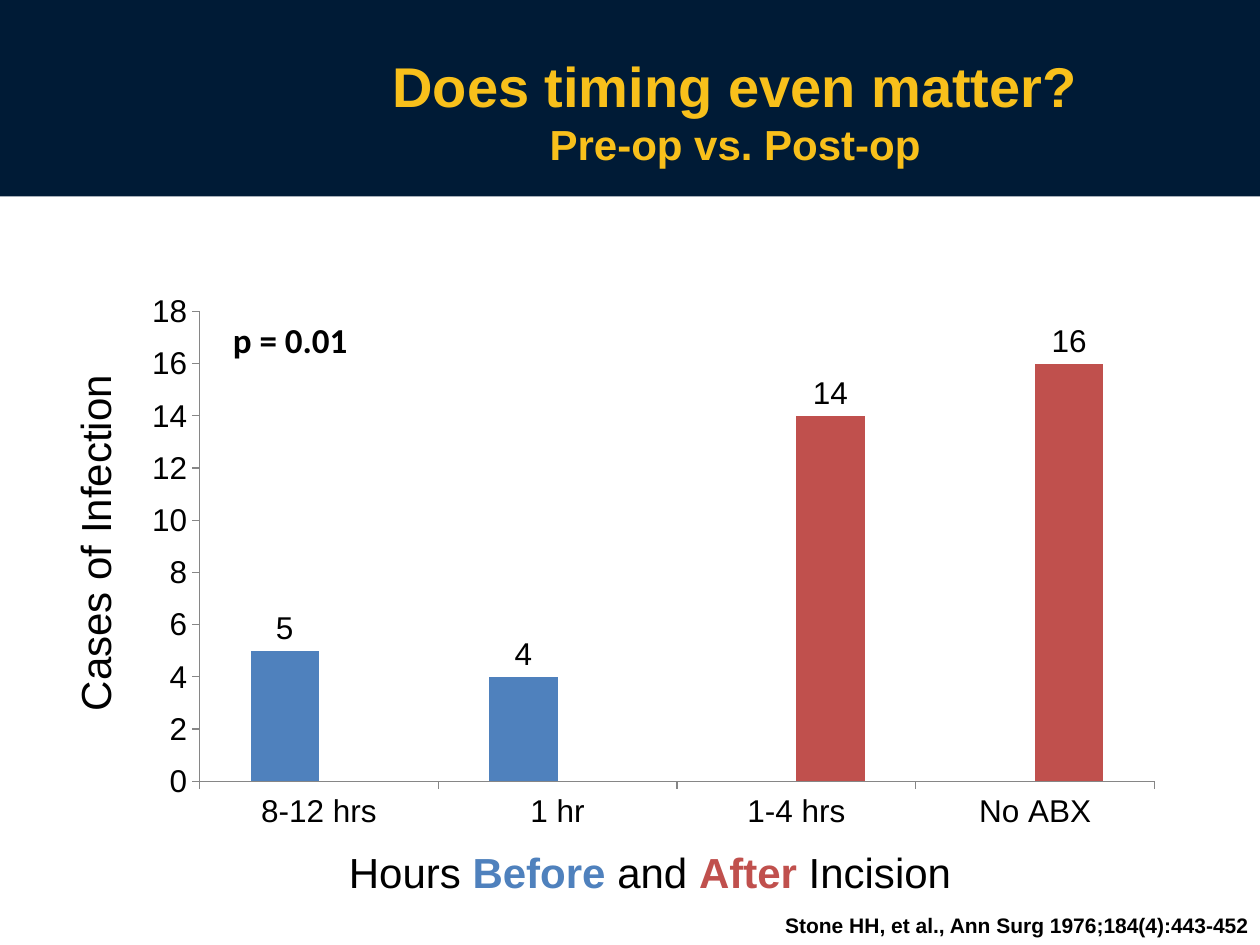
from dataclasses import dataclass

from lxml import etree
from pptx import Presentation
from pptx.chart.chart import Chart
from pptx.chart.data import CategoryChartData
from pptx.dml.color import RGBColor
from pptx.enum.chart import XL_CHART_TYPE as ChartType
from pptx.enum.chart import XL_LABEL_POSITION as LabelPosition
from pptx.enum.chart import XL_TICK_MARK as TickMark
from pptx.enum.shapes import MSO_SHAPE as ShapeType
from pptx.enum.text import MSO_ANCHOR as Anchor
from pptx.enum.text import PP_ALIGN as Align
from pptx.oxml.ns import qn
from pptx.slide import Slide
from pptx.util import Emu, Pt

PX = 9144  # 100 px to the inch

NAVY = RGBColor(0x00, 0x1B, 0x36)
GOLD = RGBColor(0xF8, 0xC0, 0x1B)
BLACK = RGBColor(0x00, 0x00, 0x00)
GREY = RGBColor(0x86, 0x86, 0x86)
BLUE = RGBColor(0x4F, 0x81, 0xBD)
RED = RGBColor(0xC0, 0x50, 0x4D)


@dataclass(frozen=True)
class Box:
    left: int
    top: int
    width: int
    height: int

    def emu(self) -> tuple[Emu, ...]:
        return tuple(Emu(v * PX) for v in (self.left, self.top, self.width, self.height))


@dataclass(frozen=True)
class Run:
    text: str
    size: int = 24
    color: RGBColor = BLACK
    bold: bool = False
    font: str = "Arial"


@dataclass(frozen=True)
class Label:
    box: Box
    lines: tuple[tuple[Run, ...], ...]
    align: Align = Align.LEFT
    anchor: Anchor = Anchor.TOP
    rotation: int = 0


@dataclass(frozen=True)
class Bars:
    name: str
    values: tuple[int | None, ...]
    color: RGBColor


BANNER = Box(0, -2, 1000, 158)
CHART_BOX = Box(100, 225, 833, 444)
PLOT_LAYOUT = {"x": 0.07, "y": 0.05, "w": 0.91, "h": 0.84}
CATEGORIES = ("8-12 hrs", "1 hr", "1-4 hrs", "No ABX")
SERIES = (
    Bars("Series 1", (5, 4, None, None), BLUE),
    Bars("Series 2", (None, None, 14, 16), RED),
)
LABELS = (
    Label(
        Box(200, 25, 767, 125),
        (
            (Run("Does timing even matter?", 32, GOLD, True),),
            (Run("Pre-op vs. Post-op", 24, GOLD, True),),
        ),
        Align.CENTER,
        Anchor.MIDDLE,
    ),
    Label(
        Box(267, 667, 542, 50),
        (
            (
                Run("Hours "),
                Run("Before ", color=BLUE, bold=True),
                Run("and "),
                Run("After", color=RED, bold=True),
                Run(" Incision"),
            ),
        ),
    ),
    Label(Box(-196, 406, 542, 50), ((Run("Cases of Infection"),),), Align.CENTER, rotation=270),
    Label(Box(175, 248, 366, 44), ((Run("p = 0.01", 20, bold=True, font="Calibri"),),)),
    Label(
        Box(613, 719, 388, 30),
        ((Run("Stone HH, et al., Ann Surg 1976;184(4):443-452", 12, bold=True),),),
        Align.RIGHT,
    ),
)


def set_font(font, run: Run) -> None:
    values = {"name": run.font, "size": Pt(run.size), "bold": run.bold}
    for name, value in values.items():
        setattr(font, name, value)
    font.color.rgb = run.color


def add_banner(slide: Slide) -> None:
    shape = slide.shapes.add_shape(ShapeType.RECTANGLE, *BANNER.emu())
    shape.shadow.inherit = False
    shape.fill.solid()
    shape.fill.fore_color.rgb = NAVY
    shape.line.fill.background()


def add_label(slide: Slide, label: Label) -> None:
    shape = slide.shapes.add_textbox(*label.box.emu())
    shape.rotation = label.rotation
    frame = shape.text_frame
    frame.word_wrap = True
    frame.vertical_anchor = label.anchor
    paragraph = frame.paragraphs[0]
    paragraph.alignment = label.align
    for index, line in enumerate(label.lines):
        if index:
            paragraph.add_line_break()
        for part in line:
            run = paragraph.add_run()
            run.text = part.text
            set_font(run.font, part)


def fix_plot_area(chart: Chart) -> None:
    """Pin the inner plot area to fractions of the chart frame."""
    plot_area = chart._chartSpace.chart.plotArea
    for old in plot_area.findall(qn("c:layout")):
        plot_area.remove(old)
    layout = etree.Element(qn("c:layout"))
    manual = etree.SubElement(layout, qn("c:manualLayout"))
    settings = {"layoutTarget": "inner", "xMode": "edge", "yMode": "edge", **PLOT_LAYOUT}
    for name, value in settings.items():
        etree.SubElement(manual, qn(f"c:{name}")).set("val", str(value))
    plot_area.insert(0, layout)


def add_infection_chart(slide: Slide) -> None:
    data = CategoryChartData()
    data.categories = CATEGORIES
    for bars in SERIES:
        data.add_series(bars.name, bars.values)
    frame = slide.shapes.add_chart(ChartType.COLUMN_CLUSTERED, *CHART_BOX.emu(), data)
    chart = frame.chart
    chart.has_legend = False
    chart.has_title = False
    set_font(chart.font, Run("", 18))
    fix_plot_area(chart)

    for axis in (chart.category_axis, chart.value_axis):
        axis.has_major_gridlines = False
        axis.major_tick_mark = TickMark.OUTSIDE
        axis.minor_tick_mark = TickMark.NONE
        axis.format.line.color.rgb = GREY
        axis.format.line.width = Pt(0.75)
    value_format = {"minimum_scale": 0, "maximum_scale": 18, "major_unit": 2}
    for name, value in value_format.items():
        setattr(chart.value_axis, name, value)

    plot = chart.plots[0]
    plot_format = {"gap_width": 150, "overlap": 0, "vary_by_categories": False}
    for name, value in plot_format.items():
        setattr(plot, name, value)
    for series, bars in zip(plot.series, SERIES):
        series.format.fill.solid()
        series.format.fill.fore_color.rgb = bars.color
        series.data_labels.show_value = True
        series.data_labels.position = LabelPosition.OUTSIDE_END


def main() -> None:
    presentation = Presentation()
    presentation.slide_width = Emu(1000 * PX)
    presentation.slide_height = Emu(750 * PX)
    slide = presentation.slides.add_slide(presentation.slide_layouts[6])
    add_banner(slide)
    add_infection_chart(slide)
    for label in LABELS:
        add_label(slide, label)
    presentation.save("out.pptx")


if __name__ == "__main__":
    main()
